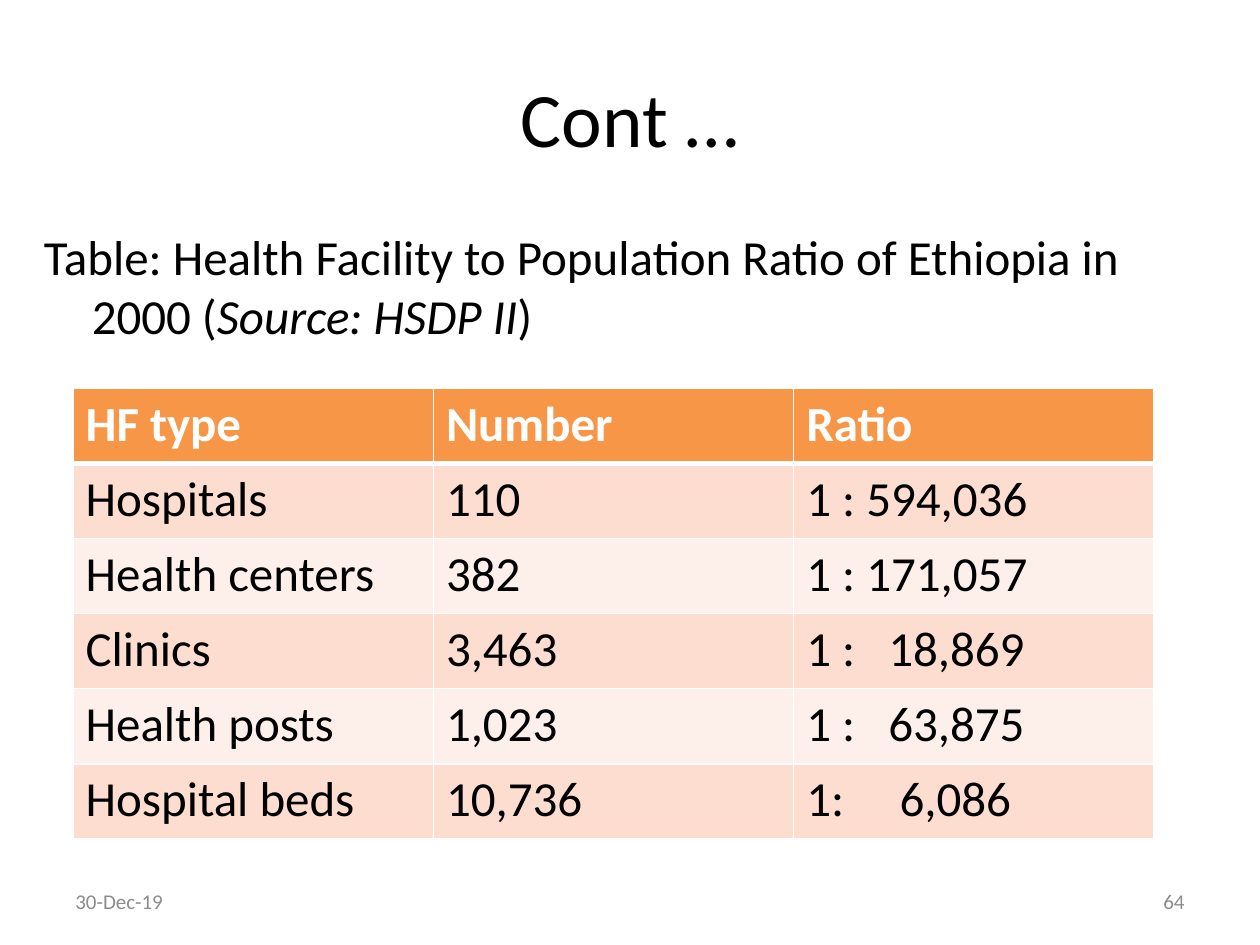
from lxml.etree import SubElement
from pptx import Presentation
from pptx.dml.color import RGBColor
from pptx.enum.text import MSO_ANCHOR as Anchor, PP_ALIGN as Align
from pptx.oxml.ns import qn
from pptx.util import Inches, Pt

BLACK = RGBColor(0x00, 0x00, 0x00)
WHITE = RGBColor(0xFF, 0xFF, 0xFF)
GRAY = RGBColor(0x8C, 0x8C, 0x8C)
ORANGE = RGBColor(0xF7, 0x96, 0x46)
BANDS = [RGBColor(0xFD, 0xEF, 0xE9), RGBColor(0xFC, 0xDD, 0xCF)]
FONT = "Calibri"

TITLE = "Cont …"
CAPTION = [
    ("Table: Health Facility to Population Ratio of Ethiopia in 2000 (", False),
    ("Source: HSDP II", True),
    (")", False),
]
DATE, PAGE = "30-Dec-19", "64"
ROWS = [
    ("HF type", "Number", "Ratio"),
    ("Hospitals", "110", "1 : 594,036"),
    ("Health centers", "382", "1 : 171,057"),
    ("Clinics", "3,463", "1 :\t18,869"),
    ("Health posts", "1,023", "1 :\t63,875"),
    ("Hospital beds", "10,736", "1:\t6,086"),
]
RATIO_TABS = {3: 0.65, 4: 0.65, 5: 0.74}


def style(font, size, color, bold=False, italic=False):
    font.name, font.size = FONT, Pt(size)
    font.bold, font.italic = bold, italic
    font.color.rgb = color


def add_text(s, box, text, size, color, align=Align.LEFT, anchor=Anchor.MIDDLE):
    tf = s.shapes.add_textbox(*map(Inches, box)).text_frame
    tf.word_wrap = True
    tf.vertical_anchor = anchor
    p = tf.paragraphs[0]
    p.text = text
    p.alignment = align
    for r in p.runs:
        style(r.font, size, color)
    return p


def add_caption(s):
    p = add_text(s, (0.25, 1.75, 9.25, 1.2), "", 28, BLACK, anchor=Anchor.TOP)
    pPr = p._p.get_or_add_pPr()
    pPr.set("marL", str(Inches(0.38)))
    pPr.set("indent", str(Inches(-0.38)))
    for text, italic in CAPTION:
        r = p.add_run()
        r.text = text
        style(r.font, 28, BLACK, italic=italic)


def set_borders(cell, widths):
    tcPr = cell._tc.get_or_add_tcPr()
    for side, width in zip("LRTB", widths):
        ln = SubElement(tcPr, qn(f"a:ln{side}"), w=str(Pt(width)))
        fill = SubElement(ln, qn("a:solidFill"))
        SubElement(fill, qn("a:srgbClr"), val=str(WHITE))


def add_tab(p, position):
    tabs = SubElement(p._p.get_or_add_pPr(), qn("a:tabLst"))
    SubElement(tabs, qn("a:tab"), pos=str(Inches(position)), algn="l")


def add_ratio_table(s):
    box = map(Inches, (0.58, 3.08, 8.58, 3.58))
    table = s.shapes.add_table(len(ROWS), len(ROWS[0]), *box).table
    for i, row in enumerate(ROWS):
        header = i == 0
        for j, text in enumerate(row):
            cell = table.cell(i, j)
            set_borders(cell, (1, 1, 3 if i == 1 else 1, 3 if header else 1))
            cell.fill.solid()
            cell.fill.fore_color.rgb = ORANGE if header else BANDS[i % 2]
            p = cell.text_frame.paragraphs[0]
            p.text = text
            if "\t" in text:
                add_tab(p, RATIO_TABS[i])
            for r in p.runs:
                style(r.font, 28, WHITE if header else BLACK, bold=header)


def main():
    prs = Presentation()
    prs.slide_width, prs.slide_height = Inches(10), Inches(7.5)
    s = prs.slides.add_slide(prs.slide_layouts[6])
    add_text(s, (0.5, 0.3, 9, 1.25), TITLE, 44, BLACK, Align.CENTER)
    add_caption(s)
    add_text(s, (0.5, 6.95, 2.33, 0.4), DATE, 12, GRAY)
    add_text(s, (7.17, 6.95, 2.33, 0.4), PAGE, 12, GRAY, Align.RIGHT)
    add_ratio_table(s)
    prs.save("out.pptx")


if __name__ == "__main__":
    main()
